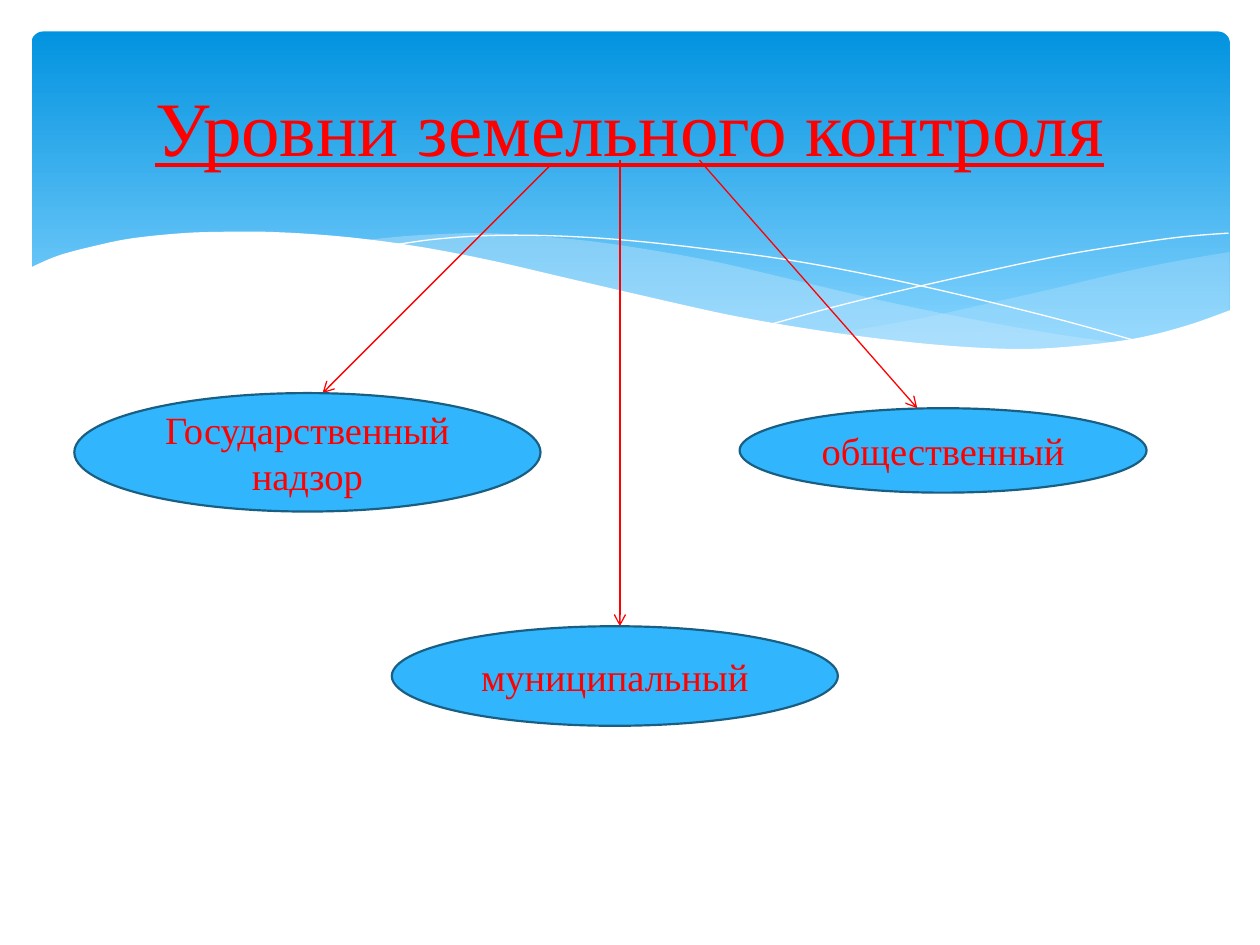
from lxml import etree
from pptx import Presentation
from pptx.dml.color import RGBColor
from pptx.enum.shapes import MSO_CONNECTOR, MSO_SHAPE
from pptx.enum.text import MSO_ANCHOR, PP_ALIGN
from pptx.oxml.ns import qn
from pptx.util import Inches, Pt

OVAL = MSO_SHAPE.OVAL
PANEL = MSO_SHAPE.ROUNDED_RECTANGLE
LINE = MSO_CONNECTOR.STRAIGHT
MIDDLE = MSO_ANCHOR.MIDDLE
CENTER = PP_ALIGN.CENTER

RED = "FF0000"
WHITE = "FFFFFF"
PALE = "C6E7FC"
STEPS = 6

RIGHT_TOP = [(9.76, 2), (9.35, 2.07), (8.91, 2.16), (8.32, 2.3), (7.79, 2.42),
             (7.29, 2.53), (6.61, 2.65)]
RIGHT_LOW = [(6.61, 2.65), (7.05, 2.71), (7.57, 2.76), (8.03, 2.78), (8.54, 2.76),
             (8.97, 2.7), (9.35, 2.62), (9.76, 2.47)]
LEFT_TOP = [(8.93, 2.73), (8.37, 2.65), (7.75, 2.54), (7.06, 2.4), (6.29, 2.22),
            (5.69, 2.08), (5.14, 1.98), (4.65, 1.91), (4.2, 1.87), (3.8, 1.85),
            (3.28, 1.87), (2.86, 1.91)]
LEFT_LOW = [(2.86, 1.91), (3.42, 1.99), (4.04, 2.11), (4.49, 2.22), (5.3, 2.4),
            (6.01, 2.55), (6.65, 2.66), (7.22, 2.74), (7.73, 2.77), (8.18, 2.78),
            (8.57, 2.77), (8.93, 2.73)]
LONG_CURVE = [(3.09, 1.95), (3.44, 1.9), (3.87, 1.87), (4.33, 1.87), (4.89, 1.9),
              (5.56, 1.97), (6.36, 2.08), (7.27, 2.26), (8.31, 2.51), (9.07, 2.72)]
SHORT_CURVE = [(6.13, 2.57), (6.72, 2.41), (7.48, 2.23), (8.36, 2.04), (8.95, 1.94),
               (9.38, 1.88), (9.75, 1.85)]
WHITE_TOP = [(9.77, 2.46), (9.4, 2.59), (8.99, 2.69), (8.5, 2.75), (8.09, 2.77),
             (7.61, 2.75), (7.08, 2.7), (6.48, 2.62), (5.79, 2.5), (5.03, 2.33),
             (4.47, 2.2), (3.91, 2.07), (3.4, 1.97), (2.92, 1.9), (2.5, 1.86),
             (2.11, 1.84), (1.77, 1.84), (1.46, 1.85), (1.06, 1.89), (0.76, 1.95),
             (0.46, 2.03), (0.23, 2.13)]


def color(code):
    return RGBColor.from_string(code)


def smooth(points):
    ends = [points[0], *points, points[-1]]
    curve = [points[0]]
    for a, b, c, d in zip(ends, ends[1:], ends[2:], ends[3:]):
        for step in range(1, STEPS + 1):
            t = step / STEPS
            curve.append(tuple(
                q + t * (r - p) / 2
                + t ** 2 * (2 * p - 5 * q + 4 * r - s) / 2
                + t ** 3 * (3 * q - p - 3 * r + s) / 2
                for p, q, r, s in zip(a, b, c, d)))
    return curve


def trace(slide, points, close):
    spots = [(Inches(x), Inches(y)) for x, y in points]
    pen = slide.shapes.build_freeform(*spots[0])
    pen.add_line_segments(spots[1:], close=close)
    shape = pen.convert_to_shape()
    shape.shadow.inherit = False
    return shape


def add_wave(slide, points, code, alpha=100):
    wave = trace(slide, points, True)
    wave.fill.solid()
    wave.fill.fore_color.rgb = color(code)
    wave.line.fill.background()
    if alpha < 100:
        tint = wave.element.spPr.find(qn("a:solidFill")).find(qn("a:srgbClr"))
        etree.SubElement(tint, qn("a:alpha"), val=str(alpha * 1000))


def add_curve(slide, points):
    curve = trace(slide, smooth(points), False)
    curve.fill.background()
    curve.line.color.rgb = color(WHITE)
    curve.line.width = Pt(0)


def add_panel(slide):
    panel = slide.shapes.add_shape(
        PANEL, Inches(0.25), Inches(0.25), Inches(9.51), Inches(2.7))
    panel.adjustments[0] = 0.034
    panel.shadow.inherit = False
    panel.line.fill.background()
    panel.fill.gradient()
    panel.fill.gradient_angle = 270
    stops = [(0, "0293E0"), (0.9, "83D3FE")]
    for stop, (place, code) in zip(panel.fill.gradient_stops, stops):
        stop.position = place
        stop.color.rgb = color(code)


def set_text(shape, text, size):
    frame = shape.text_frame
    frame.text = text
    frame.word_wrap = True
    frame.vertical_anchor = MIDDLE
    para = frame.paragraphs[0]
    para.alignment = CENTER
    para.font.name = "Times New Roman"
    para.font.size = Pt(size)
    para.font.color.rgb = color(RED)
    return para


def add_title(slide, text):
    title = slide.shapes.title
    slide.shapes.element.append(title.element)
    title.left, title.top = Inches(0.5), Inches(0.37)
    title.width, title.height = Inches(9), Inches(1.57)
    set_text(title, text, 44).font.underline = True
    title.text_frame.margin_bottom = Inches(0.36)


def add_oval(slide, text, *box):
    oval = slide.shapes.add_shape(OVAL, *map(Inches, box))
    oval.shadow.inherit = False
    oval.fill.solid()
    oval.fill.fore_color.rgb = color("31B6FD")
    oval.line.color.rgb = color("195F84")
    oval.line.width = Pt(1.25)
    set_text(oval, text, 22)


def add_arrow(slide, *ends):
    arrow = slide.shapes.add_connector(LINE, *map(Inches, ends))
    arrow.line.color.rgb = color(RED)
    arrow.line.width = Pt(0.75)
    props = arrow.element.spPr
    etree.SubElement(props.find(qn("a:ln")), qn("a:tailEnd"), type="arrow")
    etree.SubElement(props, qn("a:effectLst"))


def main():
    deck = Presentation()
    deck.slide_width, deck.slide_height = Inches(10), Inches(7.5)
    slide = deck.slides.add_slide(deck.slide_layouts[5])

    add_panel(slide)
    add_wave(slide, smooth(RIGHT_TOP) + smooth(RIGHT_LOW), PALE, 29)
    add_wave(slide, smooth(LEFT_TOP) + smooth(LEFT_LOW), PALE, 40)
    add_curve(slide, LONG_CURVE)
    add_curve(slide, SHORT_CURVE)
    add_wave(slide, smooth(WHITE_TOP) + [(0.23, 3.29), (9.77, 3.29)], WHITE)

    add_title(slide, "Уровни земельного контроля")
    add_arrow(slide, 4.37, 1.31, 2.56, 3.12)
    add_arrow(slide, 4.92, 1.27, 4.92, 4.97)
    add_arrow(slide, 5.55, 1.27, 7.28, 3.24)
    add_oval(slide, "Государственный надзор", 0.59, 3.12, 3.7, 0.94)
    add_oval(slide, "муниципальный", 3.11, 4.97, 3.54, 0.79)
    add_oval(slide, "общественный", 5.87, 3.24, 3.23, 0.67)
    deck.save("out.pptx")


if __name__ == "__main__":
    main()
